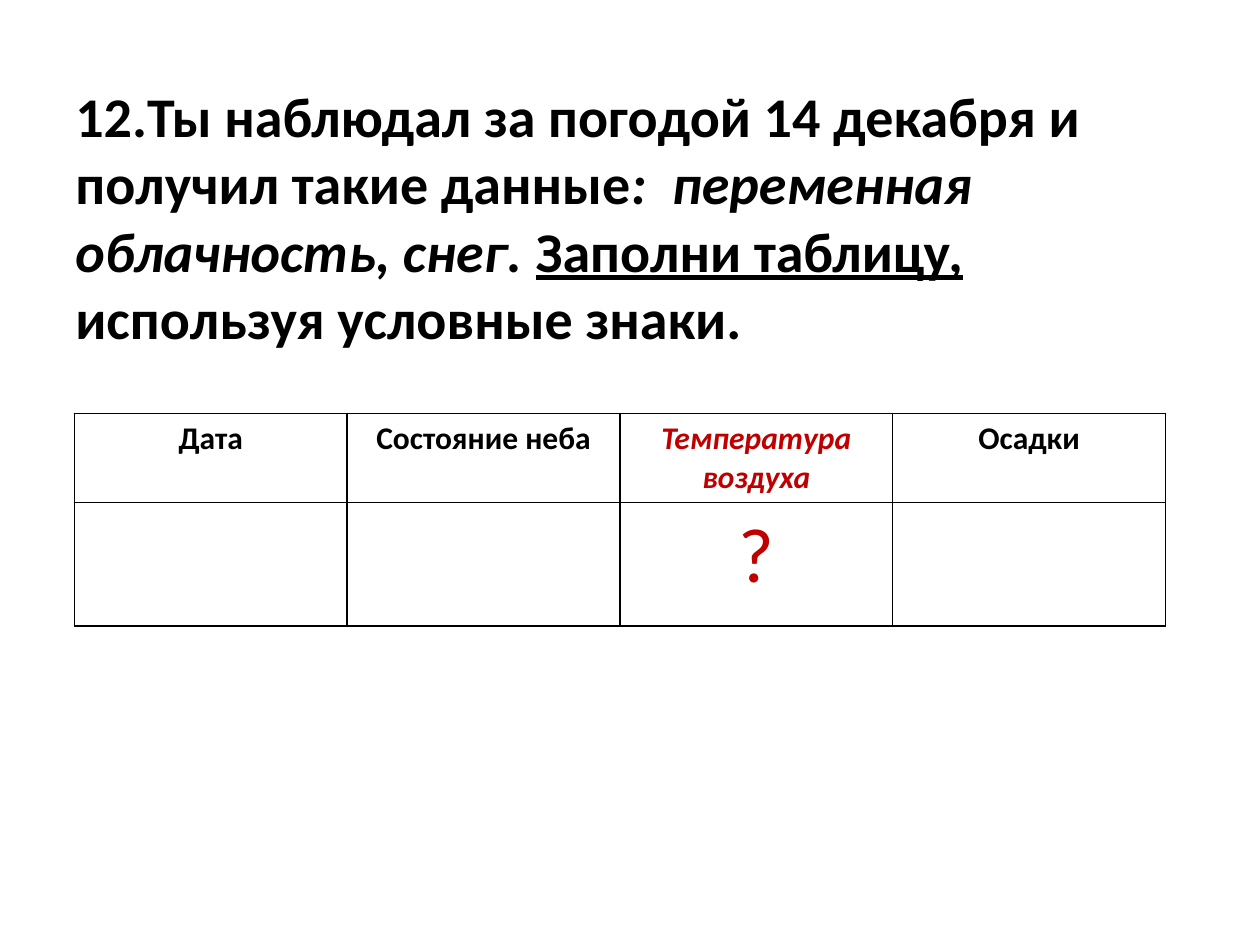
from lxml.etree import SubElement
from pptx import Presentation
from pptx.dml.color import RGBColor
from pptx.enum.text import PP_ALIGN
from pptx.oxml.ns import qn
from pptx.util import Inches, Pt

BLACK = RGBColor(0x00, 0x00, 0x00)
RED = RGBColor(0xC0, 0x00, 0x00)
FONT = "Calibri"

# text, italic, underlined
TASK = [
    ("12.Ты наблюдал за погодой 14 декабря и получил такие данные", False, False),
    (":  переменная облачность, снег. ", True, False),
    ("Заполни таблицу,", False, True),
    (" используя условные знаки.", False, False),
]
WEATHER = [
    ["Дата", "Состояние неба", "Температура воздуха", "Осадки"],
    ["", "", "?", ""],
]
ROW_HEIGHTS = [0.71, 0.98]
ROW_SIZES = [18, 44]
COLUMN_WIDTH = 2.165
TEMPERATURE_COLUMN = 2


def style_font(font, size, color, bold=True, italic=False, underline=False):
    font.name = FONT
    font.size = Pt(size)
    font.color.rgb = color
    font.bold = bold
    font.italic = italic
    font.underline = underline


def add_borders(cell, color, width):
    properties = cell._tc.get_or_add_tcPr()
    for side in ("a:lnL", "a:lnR", "a:lnT", "a:lnB"):
        line = SubElement(properties, qn(side), w=str(Pt(width)))
        fill = SubElement(line, qn("a:solidFill"))
        SubElement(fill, qn("a:srgbClr"), val=str(color))


def add_task(slide):
    box = slide.shapes.add_textbox(Inches(0.5), Inches(0.6), Inches(9), Inches(2.6))
    box.text_frame.word_wrap = True
    paragraph = box.text_frame.paragraphs[0]
    for text, italic, underline in TASK:
        run = paragraph.add_run()
        run.text = text
        style_font(run.font, 32, BLACK, italic=italic, underline=underline)


def add_weather_table(slide):
    columns = len(WEATHER[0])
    table = slide.shapes.add_table(
        len(WEATHER), columns, Inches(0.59), Inches(3.28),
        Inches(COLUMN_WIDTH * columns), Inches(sum(ROW_HEIGHTS)),
    ).table
    table.first_row = table.horz_banding = False
    for column in table.columns:
        column.width = Inches(COLUMN_WIDTH)
    for row_index, texts in enumerate(WEATHER):
        table.rows[row_index].height = Inches(ROW_HEIGHTS[row_index])
        is_header = row_index == 0
        for column_index, text in enumerate(texts):
            cell = table.cell(row_index, column_index)
            add_borders(cell, BLACK, 1)
            cell.fill.background()
            if not text:
                continue
            is_temperature = column_index == TEMPERATURE_COLUMN
            cell.text_frame.text = text
            paragraph = cell.text_frame.paragraphs[0]
            paragraph.alignment = PP_ALIGN.CENTER
            style_font(
                paragraph.runs[0].font, ROW_SIZES[row_index],
                RED if is_temperature else BLACK,
                bold=is_header, italic=is_header and is_temperature,
            )


def main():
    presentation = Presentation()
    presentation.slide_width = Inches(10)
    presentation.slide_height = Inches(7.5)
    slide = presentation.slides.add_slide(presentation.slide_layouts[6])
    add_task(slide)
    add_weather_table(slide)
    presentation.save("out.pptx")


if __name__ == "__main__":
    main()
